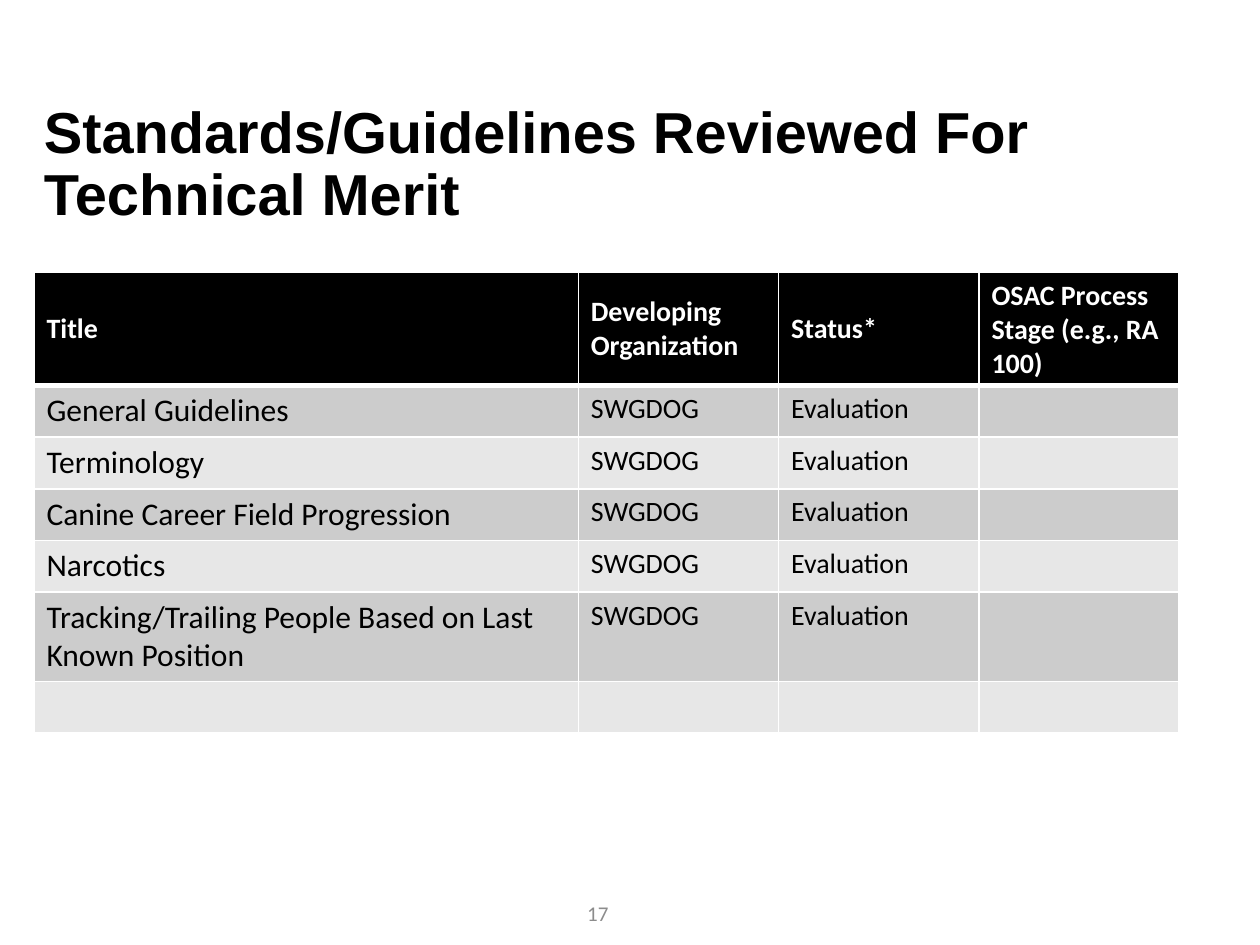
from dataclasses import dataclass

import pptx
import pptx.dml.color
import pptx.enum.text
import pptx.oxml.ns
import pptx.util
from lxml import etree
from pptx.util import Inches

ANCHOR = pptx.enum.text.MSO_ANCHOR
ALIGN = pptx.enum.text.PP_ALIGN


@dataclass(frozen=True)
class Theme:
    heading_font: str = "Arial"
    body_font: str = "Calibri"
    black: str = "000000"
    white: str = "FFFFFF"
    bands: tuple = ("CCCCCC", "E7E7E7")
    number_gray: str = "8C8C8C"
    heading_size: float = 33
    standard_size: float = 18
    detail_size: float = 16
    number_size: float = 12
    rule: float = 1
    header_rule: float = 3


THEME = Theme()

HEADERS = ("Title", "Developing Organization", "Status*",
           "OSAC Process Stage (e.g., RA 100)")
STANDARDS = ("General Guidelines", "Terminology",
             "Canine Career Field Progression", "Narcotics",
             "Tracking/Trailing People Based on Last Known Position")
ROWS = [HEADERS,
        *((standard, "SWGDOG", "Evaluation", "") for standard in STANDARDS),
        ("",) * len(HEADERS)]
COLUMN_WIDTHS = (4.32, 1.59, 1.59, 1.59)
ROW_HEIGHTS = (0.9, 0.41, 0.41, 0.41, 0.41, 0.71, 0.41)


def rgb(color):
    return pptx.dml.color.RGBColor.from_string(color)


def add_run(paragraph, text, font_name, size, color, bold=False):
    run = paragraph.add_run()
    run.text = text
    run.font.name = font_name
    run.font.size = pptx.util.Pt(size)
    run.font.bold = bold
    run.font.color.rgb = rgb(color)


def add_text_box(slide, box):
    """Add a wrapped, vertically centred box and return its paragraph."""
    frame = slide.shapes.add_textbox(*box).text_frame
    frame.word_wrap = True
    frame.vertical_anchor = ANCHOR.MIDDLE
    return frame.paragraphs[0]


def set_borders(cell, top, bottom):
    """Draw white cell borders, with the top and bottom widths in points."""
    properties = cell._tc.get_or_add_tcPr()
    sides = {"L": THEME.rule, "R": THEME.rule, "T": top, "B": bottom}
    for side, width in sides.items():
        line = etree.SubElement(properties, pptx.oxml.ns.qn(f"a:ln{side}"),
                                w=str(pptx.util.Pt(width)))
        fill = etree.SubElement(line, pptx.oxml.ns.qn("a:solidFill"))
        etree.SubElement(fill, pptx.oxml.ns.qn("a:srgbClr"), val=THEME.white)


def add_heading(slide, box):
    paragraph = add_text_box(slide, box)
    paragraph.line_spacing = 0.9
    add_run(paragraph, "Standards/Guidelines Reviewed For Technical Merit",
            THEME.heading_font, THEME.heading_size, THEME.black, bold=True)


def fill_cell(cell, text, row, column):
    is_header = row == 0
    set_borders(cell,
                top=THEME.header_rule if row == 1 else THEME.rule,
                bottom=THEME.header_rule if is_header else THEME.rule)
    cell.fill.solid()
    cell.fill.fore_color.rgb = rgb(
        THEME.black if is_header else THEME.bands[(row - 1) % 2])
    cell.vertical_anchor = ANCHOR.MIDDLE if is_header else ANCHOR.TOP
    if text:
        is_standard = column == 0 and not is_header
        add_run(cell.text_frame.paragraphs[0], text, THEME.body_font,
                THEME.standard_size if is_standard else THEME.detail_size,
                THEME.white if is_header else THEME.black, bold=is_header)


def add_standards_table(slide, box):
    table = slide.shapes.add_table(len(ROWS), len(HEADERS), *box).table
    for column, width in zip(table.columns, COLUMN_WIDTHS):
        column.width = Inches(width)
    for row, height in zip(table.rows, ROW_HEIGHTS):
        row.height = Inches(height)
    for row, texts in enumerate(ROWS):
        for column, text in enumerate(texts):
            fill_cell(table.cell(row, column), text, row, column)


def add_page_number(slide, box):
    paragraph = add_text_box(slide, box)
    paragraph.alignment = ALIGN.CENTER
    add_run(paragraph, "17", THEME.body_font, THEME.number_size,
            THEME.number_gray)


def main():
    presentation = pptx.Presentation()
    presentation.slide_width = Inches(10)
    presentation.slide_height = Inches(7.5)
    slide = presentation.slides.add_slide(presentation.slide_layouts[6])
    add_heading(slide, (Inches(0.25), Inches(0.59), Inches(8.62), Inches(1.45)))
    add_standards_table(slide, (Inches(0.27), Inches(2.16),
                                Inches(sum(COLUMN_WIDTHS)),
                                Inches(sum(ROW_HEIGHTS))))
    add_page_number(slide, (Inches(3.62), Inches(7.05), Inches(2.25), Inches(0.4)))
    presentation.save("out.pptx")


if __name__ == "__main__":
    main()
